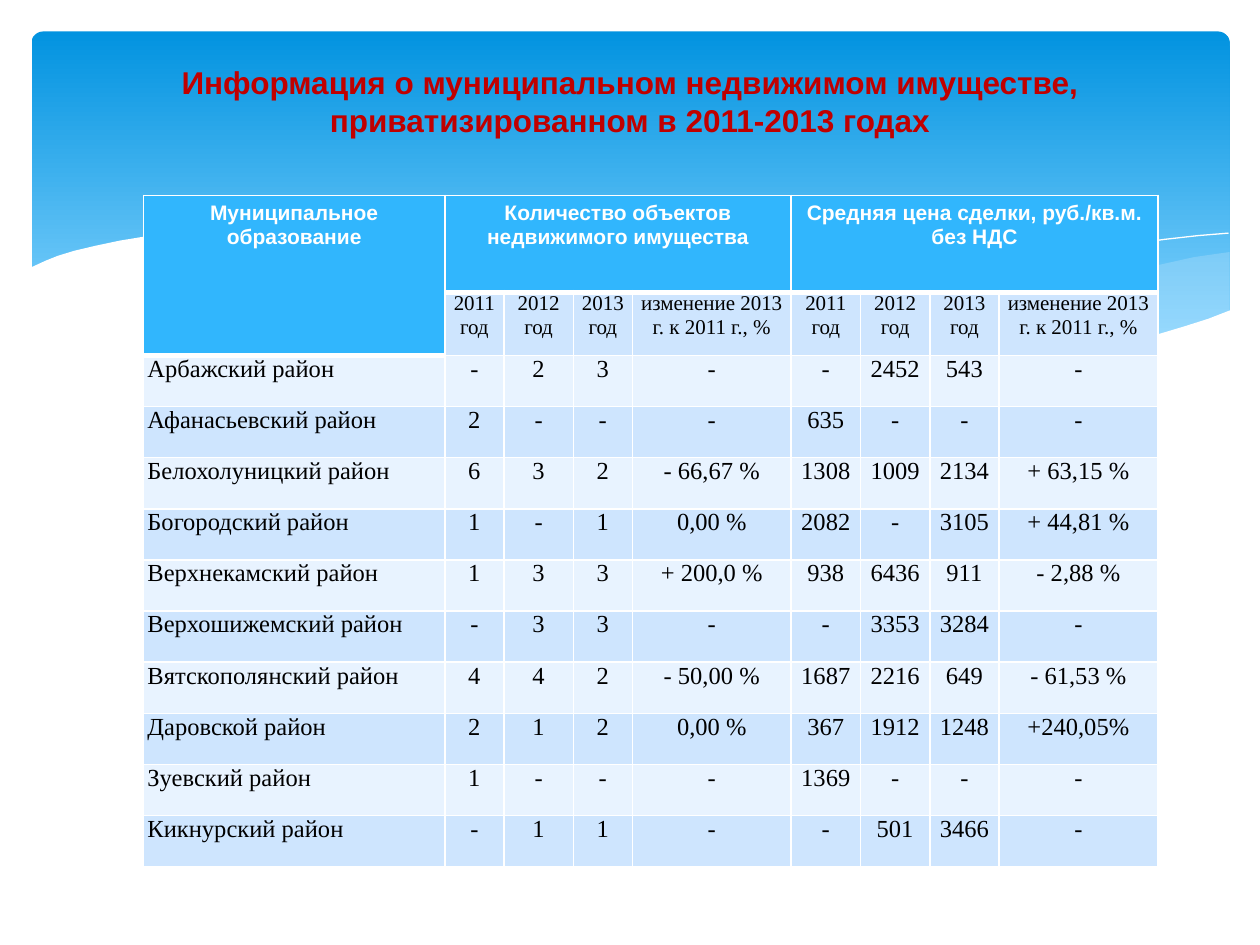
from dataclasses import dataclass

from lxml import etree
from pptx import Presentation
from pptx.dml.color import RGBColor
from pptx.enum.shapes import MSO_SHAPE
from pptx.enum.text import MSO_ANCHOR, PP_ALIGN
from pptx.oxml.ns import qn
from pptx.util import Inches, Pt

ROUNDED = MSO_SHAPE.ROUNDED_RECTANGLE
MIDDLE = MSO_ANCHOR.MIDDLE
LEFT, CENTER = PP_ALIGN.LEFT, PP_ALIGN.CENTER


@dataclass(frozen=True)
class Theme:
    heading_font: str = "Arial"
    body_font: str = "Times New Roman"
    title_size: int = 18
    header_size: int = 12
    body_size: int = 14
    title: str = "C00000"
    white: str = "FFFFFF"
    black: str = "000000"
    sky_top: str = "0293E0"
    sky_bottom: str = "83D3FE"
    wave: str = "C6E7FC"
    header: str = "31B6FD"
    band_dark: str = "CEE5FE"
    band_light: str = "E8F3FF"
    thin: float = 1
    thick: float = 3


class SlideBuilder:
    def __init__(self, slide, theme):
        self.slide = slide
        self.theme = theme

    def set_text(self, frame, text, font, size, color, bold=False, align=CENTER):
        paragraph = frame.paragraphs[0]
        paragraph.text = text
        paragraph.alignment = align
        paragraph.font.name = font
        paragraph.font.size = Pt(size)
        paragraph.font.bold = bold
        paragraph.font.color.rgb = RGBColor.from_string(color)

    def sky(self, left, top, width, height):
        shape = self.slide.shapes.add_shape(
            ROUNDED, Inches(left), Inches(top), Inches(width), Inches(height))
        shape.adjustments[0] = 0.034
        shape.shadow.inherit = False
        shape.line.fill.background()
        shape.fill.gradient()
        shape.fill.gradient_angle = 270
        stops = ((0, self.theme.sky_top), (0.9, self.theme.sky_bottom))
        for stop, (position, color) in zip(shape.fill.gradient_stops, stops):
            stop.position = position
            stop.color.rgb = RGBColor.from_string(color)

    def outline(self, points, close):
        corners = [(Inches(x), Inches(y)) for x, y in points]
        builder = self.slide.shapes.build_freeform(*corners[0])
        builder.add_line_segments(corners[1:], close=close)
        shape = builder.convert_to_shape()
        shape.shadow.inherit = False
        return shape

    def wave(self, points, color, opacity=100):
        shape = self.outline(points, True)
        shape.line.fill.background()
        shape.fill.solid()
        shape.fill.fore_color.rgb = RGBColor.from_string(color)
        if opacity < 100:
            fill = shape.element.spPr.find(qn("a:solidFill"))
            etree.SubElement(fill[0], qn("a:alpha"), val=str(opacity * 1000))

    def curve(self, points):
        shape = self.outline(points, False)
        shape.fill.background()
        shape.line.width = Pt(0)
        shape.line.color.rgb = RGBColor.from_string(self.theme.white)

    def title(self, text, left, top, width, height):
        box = self.slide.shapes.add_textbox(
            Inches(left), Inches(top), Inches(width), Inches(height))
        frame = box.text_frame
        frame.word_wrap = True
        frame.vertical_anchor = MIDDLE
        self.set_text(frame, text, self.theme.heading_font, self.theme.title_size,
                      self.theme.title, True)

    def borders(self, cell, top, bottom):
        properties = cell._tc.get_or_add_tcPr()
        thin = self.theme.thin
        sides = (("L", thin), ("R", thin), ("T", top), ("B", bottom))
        for index, (side, width) in enumerate(sides):
            line = etree.Element(qn("a:ln" + side), w=str(Pt(width)))
            fill = etree.SubElement(line, qn("a:solidFill"))
            etree.SubElement(fill, qn("a:srgbClr"), val=self.theme.white)
            properties.insert(index, line)

    def cell(self, table, row, column, text):
        theme = self.theme
        cell = table.cell(row, column)
        body_start = 2 if column == 0 else 1
        heading = row < body_start
        if heading:
            color = theme.header
        else:
            color = theme.band_dark if row % 2 else theme.band_light
            cell.margin_left = cell.margin_right = Inches(0.03)
            cell.margin_top = cell.margin_bottom = 0
        cell.fill.solid()
        cell.fill.fore_color.rgb = RGBColor.from_string(color)
        self.borders(cell,
                     theme.thick if row == body_start else theme.thin,
                     theme.thick if heading else theme.thin)
        if text:
            self.set_text(cell.text_frame, text,
                          theme.heading_font if heading else theme.body_font,
                          theme.header_size if row < 2 else theme.body_size,
                          theme.white if heading else theme.black, heading,
                          LEFT if column == 0 and not heading else CENTER)

    def table(self, rows, left, top, widths, heights, merges):
        table = self.slide.shapes.add_table(
            len(rows), len(widths), Inches(left), Inches(top),
            Inches(sum(widths)), Inches(sum(heights))).table
        table.first_row = table.horz_banding = False
        for column, width in zip(table.columns, widths):
            column.width = Inches(width)
        for row, height in zip(table.rows, heights):
            row.height = Inches(height)
        for first, last in merges:
            table.cell(*first).merge(table.cell(*last))
        for row, values in enumerate(rows):
            for column, text in enumerate(values):
                self.cell(table, row, column, text)


RIGHT_WAVE = [
    (9.76, 2), (9.48, 2.04), (9.21, 2.1), (8.91, 2.16), (8.61, 2.23), (8.05, 2.37),
    (7.53, 2.48), (7.06, 2.57), (6.61, 2.65), (6.91, 2.69), (7.32, 2.74), (7.69, 2.77),
    (8.03, 2.78), (8.35, 2.77), (8.63, 2.75), (8.89, 2.72), (9.13, 2.67), (9.35, 2.62),
    (9.49, 2.57), (9.63, 2.52), (9.76, 2.47)]
MIDDLE_WAVE = [
    (8.93, 2.73), (8.66, 2.69), (8.07, 2.6), (7.41, 2.47), (6.68, 2.31), (6.29, 2.22),
    (5.84, 2.11), (5.41, 2.03), (5.02, 1.96), (4.65, 1.91), (4.2, 1.87), (3.8, 1.85),
    (3.44, 1.86), (3.13, 1.88), (2.86, 1.91), (3.23, 1.96), (3.62, 2.03), (4.04, 2.11),
    (4.49, 2.22), (4.91, 2.32), (5.3, 2.4), (5.84, 2.52), (6.34, 2.61), (6.8, 2.68),
    (7.22, 2.74), (7.61, 2.77), (7.96, 2.78), (8.38, 2.78), (8.67, 2.76)]
LONG_CURVE = [
    (3.09, 1.95), (3.28, 1.92), (3.53, 1.89), (3.87, 1.87), (4.33, 1.87), (4.69, 1.89),
    (5.1, 1.92), (5.56, 1.97), (6.08, 2.04), (6.65, 2.13), (7.27, 2.26), (7.95, 2.41),
    (8.69, 2.61), (9.07, 2.72)]
RIGHT_CURVE = [
    (6.13, 2.57), (6.53, 2.46), (6.95, 2.35), (7.48, 2.23), (8.06, 2.1), (8.66, 1.99),
    (8.95, 1.94), (9.24, 1.9), (9.51, 1.87), (9.75, 1.85)]
WHITE_WAVE = [
    (9.77, 2.46), (9.59, 2.53), (9.4, 2.59), (9.2, 2.65), (8.99, 2.69), (8.75, 2.73),
    (8.5, 2.75), (8.23, 2.77), (7.93, 2.76), (7.61, 2.75), (7.26, 2.72), (6.88, 2.68),
    (6.48, 2.62), (6.03, 2.54), (5.55, 2.45), (5.03, 2.33), (4.47, 2.2), (3.91, 2.07),
    (3.4, 1.97), (2.92, 1.9), (2.5, 1.86), (2.11, 1.84), (1.77, 1.84), (1.46, 1.85),
    (1.19, 1.87), (0.95, 1.91), (0.76, 1.95), (0.59, 1.99), (0.46, 2.03), (0.36, 2.07),
    (0.23, 2.13), (0.23, 3.29), (9.77, 3.29)]

PERIODS = ["2011 год", "2012 год", "2013 год", "изменение 2013 г. к 2011 г., %"]
ROWS = [
    ["Муниципальное образование", "Количество объектов недвижимого имущества", "", "", "",
     "Средняя цена сделки, руб./кв.м. без НДС", "", "", ""],
    ["", *PERIODS, *PERIODS],
    ["Арбажский район", "-", "2", "3", "-", "-", "2452", "543", "-"],
    ["Афанасьевский район", "2", "-", "-", "-", "635", "-", "-", "-"],
    ["Белохолуницкий район", "6", "3", "2", "- 66,67 %", "1308", "1009", "2134", "+ 63,15 %"],
    ["Богородский район", "1", "-", "1", "0,00 %", "2082", "-", "3105", "+ 44,81 %"],
    ["Верхнекамский район", "1", "3", "3", "+ 200,0 %", "938", "6436", "911", "- 2,88 %"],
    ["Верхошижемский район", "-", "3", "3", "-", "-", "3353", "3284", "-"],
    ["Вятскополянский район", "4", "4", "2", "- 50,00 %", "1687", "2216", "649", "- 61,53 %"],
    ["Даровской район", "2", "1", "2", "0,00 %", "367", "1912", "1248", "+240,05%"],
    ["Зуевский район", "1", "-", "-", "-", "1369", "-", "-", "-"],
    ["Кикнурский район", "-", "1", "1", "-", "-", "501", "3466", "-"],
]
WIDTHS = [2.39, 0.47, 0.55, 0.47, 1.26, 0.55, 0.55, 0.55, 1.26]
HEADER_HEIGHTS = [0.77, 0.48]
BODY_HEIGHT = 4.06
MERGES = [((0, 0), (1, 0)), ((0, 1), (0, 4)), ((0, 5), (0, 8))]


def main():
    presentation = Presentation()
    presentation.slide_width, presentation.slide_height = Inches(10), Inches(7.5)
    theme = Theme()
    builder = SlideBuilder(
        presentation.slides.add_slide(presentation.slide_layouts[6]), theme)
    builder.sky(0.25, 0.25, 9.51, 2.7)
    builder.wave(RIGHT_WAVE, theme.wave, 29)
    builder.wave(MIDDLE_WAVE, theme.wave, 40)
    builder.curve(LONG_CURVE)
    builder.curve(RIGHT_CURVE)
    builder.wave(WHITE_WAVE, theme.white)
    builder.title("Информация о муниципальном недвижимом имуществе, "
                  "приватизированном в 2011-2013 годах", 0.5, 0.37, 9, 0.86)
    body_rows = len(ROWS) - len(HEADER_HEIGHTS)
    heights = HEADER_HEIGHTS + [BODY_HEIGHT / body_rows] * body_rows
    builder.table(ROWS, 1.14, 1.55, WIDTHS, heights, MERGES)
    presentation.save("out.pptx")


if __name__ == "__main__":
    main()
